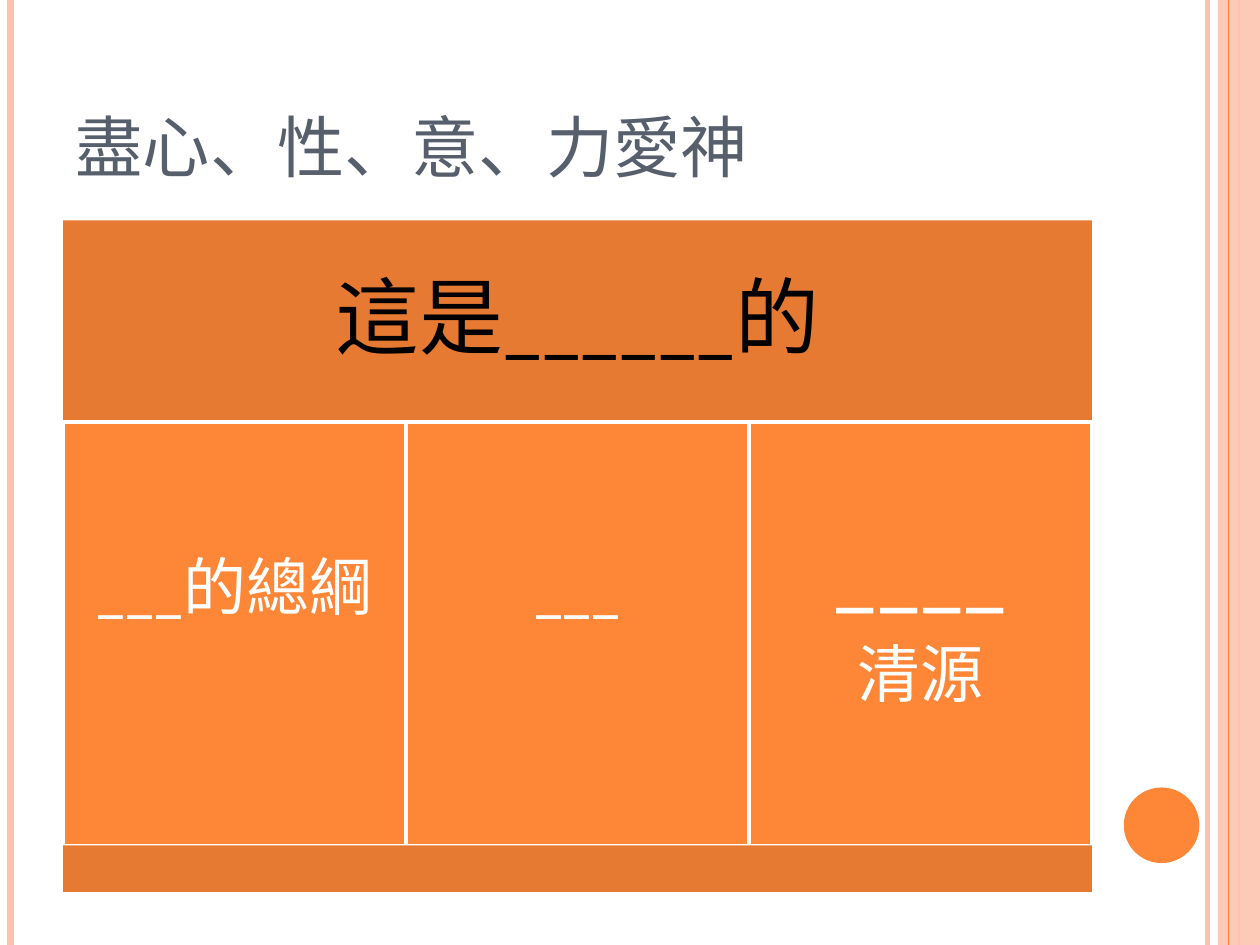
from lxml.etree import SubElement
from pptx import Presentation
from pptx.dml.color import RGBColor
from pptx.enum.shapes import MSO_CONNECTOR, MSO_SHAPE
from pptx.enum.text import MSO_ANCHOR, PP_ALIGN
from pptx.oxml.ns import qn
from pptx.util import Pt

COLORS = {
    "peach": "FEC3AE",
    "orange": "FE8637",
    "dark_orange": "E77A32",
    "title": "575F6D",
    "black": "000000",
    "white": "FFFFFF",
}
FONT = "Lato"
WIDTH, HEIGHT = 720, 540
LEFT, TABLE_WIDTH = 36, 588
HEADER_TOP, HEADER_HEIGHT = 126, 115.2
COLUMN_TOP, COLUMN_HEIGHT = 241.2, 241.9
FOOTER_TOP, FOOTER_HEIGHT = 483.1, 26.6

presentation = Presentation()
presentation.slide_width = Pt(WIDTH)
presentation.slide_height = Pt(HEIGHT)
slide = presentation.slides.add_slide(presentation.slide_layouts[5])


def add_box(kind, left, top, width, height, color):
    shape = slide.shapes.add_shape(kind, Pt(left), Pt(top), Pt(width), Pt(height))
    shape.shadow.inherit = False
    shape.fill.solid()
    shape.fill.fore_color.rgb = RGBColor.from_string(COLORS[color])
    shape.line.fill.background()
    return shape


def write_text(shape, lines, color, inset, extra_bottom=0):
    frame = shape.text_frame
    frame.word_wrap = True
    frame.vertical_anchor = MSO_ANCHOR.MIDDLE
    frame.margin_left = frame.margin_right = frame.margin_top = Pt(inset)
    frame.margin_bottom = Pt(inset + extra_bottom)
    for index, (text, size) in enumerate(lines):
        paragraph = frame.add_paragraph() if index else frame.paragraphs[0]
        paragraph.text = text
        paragraph.alignment = PP_ALIGN.CENTER
        paragraph.line_spacing = 0.9
        paragraph.space_before = Pt(12.6 if index else 0)
        paragraph.font.size = Pt(size)
        paragraph.font.name = FONT
        paragraph.font.color.rgb = RGBColor.from_string(COLORS[color])


side_band = add_box(MSO_SHAPE.RECTANGLE, 696, 0, 24, HEIGHT, "peach")
band_color = side_band.fill._xPr.find(qn("a:solidFill"))[0]
SubElement(band_color, qn("a:alpha"), val="87000")

for x, color, weight in [
    (690, "peach", 3),
    (6, "peach", 4.5),
    (708, "peach", 1.5),
    (702, "orange", 0.75),
]:
    stripe = slide.shapes.add_connector(MSO_CONNECTOR.STRAIGHT, Pt(x), Pt(0), Pt(x), Pt(HEIGHT))
    stripe.line.color.rgb = RGBColor.from_string(COLORS[color])
    stripe.line.width = Pt(weight)
    SubElement(stripe._element.spPr, qn("a:effectLst"))

add_box(MSO_SHAPE.OVAL, 642.2, 450, 43.2, 43.2, "orange")

title = slide.shapes.title
title.left, title.top, title.width, title.height = Pt(LEFT), Pt(21.6), Pt(TABLE_WIDTH), Pt(90)
title.text_frame.vertical_anchor = MSO_ANCHOR.BOTTOM
title.text_frame.text = "盡心、性、意、力愛神"
paragraph = title.text_frame.paragraphs[0]
paragraph.alignment = PP_ALIGN.LEFT
paragraph.font.size = Pt(48)
paragraph.font.name = FONT
paragraph.font.color.rgb = RGBColor.from_string(COLORS["title"])
paragraph.font._element.set("cap", "small")

header = add_box(MSO_SHAPE.RECTANGLE, LEFT, HEADER_TOP, TABLE_WIDTH, HEADER_HEIGHT, "dark_orange")
write_text(header, [("這是______的", 48)], "black", 14.4)

columns = [
    ([("___的總綱", 36)], 10.8, 50),
    ([("___", 36)], 10.8, 50),
    ([("____", 54), ("清源", 36)], 16.2, 21),
]
column_width = TABLE_WIDTH / len(columns)
for index, (lines, inset, extra_bottom) in enumerate(columns):
    column = add_box(
        MSO_SHAPE.RECTANGLE, LEFT + index * column_width, COLUMN_TOP,
        column_width, COLUMN_HEIGHT, "orange",
    )
    column.line.color.rgb = RGBColor.from_string(COLORS["white"])
    column.line.width = Pt(2)
    write_text(column, lines, "white", inset, extra_bottom)

add_box(MSO_SHAPE.RECTANGLE, LEFT, FOOTER_TOP, TABLE_WIDTH, FOOTER_HEIGHT, "dark_orange")

presentation.save("out.pptx")
